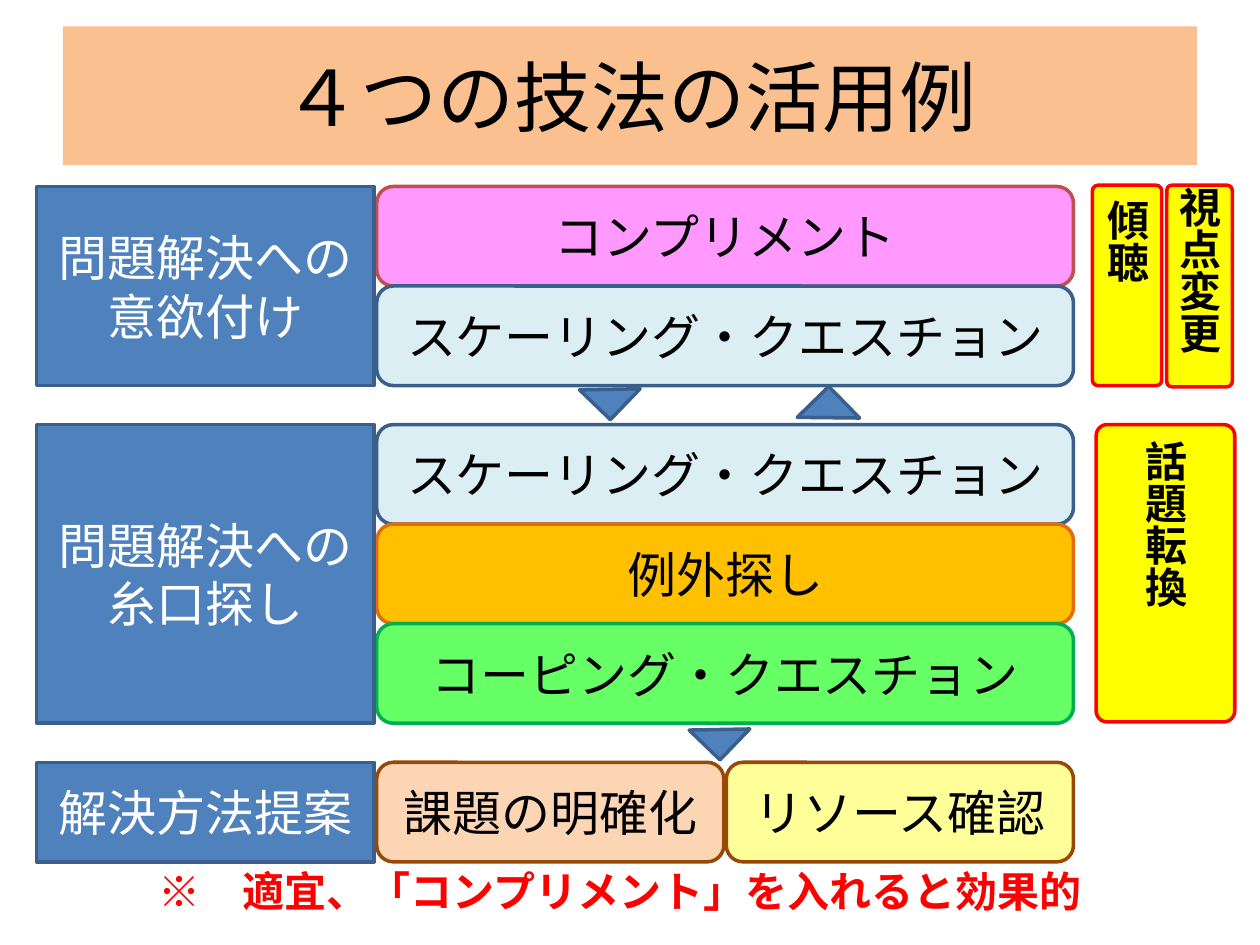
from dataclasses import dataclass

import pptx
import pptx.dml.color
import pptx.enum.shapes
import pptx.enum.text
import pptx.oxml
import pptx.oxml.ns
import pptx.util

Inches = pptx.util.Inches
Shape = pptx.enum.shapes.MSO_SHAPE


@dataclass(frozen=True)
class Theme:
    font: str = "Noto Sans CJK JP"
    title_size: int = 44
    body_size: int = 28
    note_size: int = 24
    line_width: int = 2
    black: str = "000000"
    white: str = "FFFFFF"
    red: str = "FF0000"
    yellow: str = "FFFF00"
    blue: str = "4F81BD"
    navy: str = "3A5F8C"
    title_fill: str = "FAC090"


@dataclass(frozen=True)
class Box:
    left: float
    top: float
    width: float
    height: float


@dataclass(frozen=True)
class Technique:
    text: str
    fill: str
    line: str


@dataclass(frozen=True)
class Stage:
    label: str
    top: float
    rows: tuple[tuple[Technique, ...], ...]


@dataclass(frozen=True)
class SkillTag:
    text: str
    box: Box
    margin: tuple[float, float] = (0.1, 0.05)


@dataclass(frozen=True)
class Arrow:
    box: Box
    rotation: float


THEME = Theme()
ROW_HEIGHT = 0.79
LABEL_LEFT, LABEL_WIDTH = 0.29, 2.68
BAR_LEFT, BAR_WIDTH, BAR_GAP = 2.99, 5.53, 0.02

SCALING = Technique("スケーリング・クエスチョン", "DBEEF4", THEME.navy)
STAGES = (
    Stage("問題解決への意欲付け", 1.48, (
        (Technique("コンプリメント", "FF99FF", "C0504D"),),
        (SCALING,),
    )),
    Stage("問題解決への\n糸口探し", 3.37, (
        (SCALING,),
        (Technique("例外探し", "FFC000", "E46C0A"),),
        (Technique("コーピング・クエスチョン", "66FF66", "00B050"),),
    )),
    Stage("解決方法提案", 6.05, (
        (Technique("課題の明確化", "FCD5B5", "984807"),
         Technique("リソース確認", "FFFF99", "984807")),
    )),
)
SKILL_TAGS = (
    SkillTag("傾聴", Box(8.67, 1.47, 0.55, 1.59)),
    SkillTag("話題転換", Box(8.7, 3.37, 1.1, 2.36)),
    SkillTag("視点変更", Box(9.26, 1.47, 0.52, 1.6), (0, 0)),
)
ARROWS = (
    Arrow(Box(4.67, 2.92, 0.34, 0.34), 314),
    Arrow(Box(6.4, 3.14, 0.35, 0.35), 135.6),
    Arrow(Box(5.54, 5.62, 0.34, 0.34), 314),
)


def rgb(color: str) -> pptx.dml.color.RGBColor:
    return pptx.dml.color.RGBColor.from_string(color)


def lengths(box: Box) -> tuple[int, ...]:
    return tuple(map(Inches, (box.left, box.top, box.width, box.height)))


def write_text(shape, text: str, size: int, color: str, bold: bool = False,
               margin: tuple[float, float] = (0.1, 0.05)) -> None:
    """Centre the text, one paragraph a line; margin is (sides, top and bottom)."""
    frame = shape.text_frame
    frame.word_wrap = True
    frame.vertical_anchor = pptx.enum.text.MSO_ANCHOR.MIDDLE
    frame.margin_left = frame.margin_right = Inches(margin[0])
    frame.margin_top = frame.margin_bottom = Inches(margin[1])
    frame.text = text
    for paragraph in frame.paragraphs:
        paragraph.alignment = pptx.enum.text.PP_ALIGN.CENTER
        font = paragraph.font
        font.name = THEME.font
        font.size = pptx.util.Pt(size)
        font.bold = bold
        font.color.rgb = rgb(color)
        properties = paragraph._p.pPr.find(pptx.oxml.ns.qn("a:defRPr"))
        properties.append(pptx.oxml.parse_xml(
            f'<a:ea {pptx.oxml.ns.nsdecls("a")} typeface="{THEME.font}"/>'))


def add_block(slide, kind: Shape, box: Box, fill: str, line: str | None = None):
    shape = slide.shapes.add_shape(kind, *lengths(box))
    shape.shadow.inherit = False
    shape.fill.solid()
    shape.fill.fore_color.rgb = rgb(fill)
    if line is None:
        shape.line.fill.background()
    else:
        shape.line.color.rgb = rgb(line)
        shape.line.width = pptx.util.Pt(THEME.line_width)
    return shape


def draw_stage(slide, stage: Stage) -> None:
    """Draw the stage's label and, beside it, its rows of techniques."""
    for index, row in enumerate(stage.rows):
        width = (BAR_WIDTH - BAR_GAP * (len(row) - 1)) / len(row)
        margin = (0.1 if len(row) == 1 else 0, 0.05)
        for column, technique in enumerate(row):
            box = Box(BAR_LEFT + column * (width + BAR_GAP),
                      stage.top + index * ROW_HEIGHT, width, ROW_HEIGHT)
            bar = add_block(slide, Shape.ROUNDED_RECTANGLE, box,
                            technique.fill, technique.line)
            write_text(bar, technique.text, THEME.body_size, THEME.black, margin=margin)
    box = Box(LABEL_LEFT, stage.top, LABEL_WIDTH, ROW_HEIGHT * len(stage.rows))
    label = add_block(slide, Shape.RECTANGLE, box, THEME.blue, THEME.navy)
    write_text(label, stage.label, THEME.body_size, THEME.white)


def draw_skill_tag(slide, tag: SkillTag) -> None:
    shape = add_block(slide, Shape.ROUNDED_RECTANGLE, tag.box, THEME.yellow, THEME.red)
    shape.adjustments[0] = 0.08
    write_text(shape, tag.text, THEME.note_size, THEME.black, True, tag.margin)
    shape.text_frame._txBody.bodyPr.set("vert", "eaVert")


def draw_arrow(slide, arrow: Arrow) -> None:
    shape = add_block(slide, Shape.RIGHT_TRIANGLE, arrow.box, THEME.blue, THEME.navy)
    shape.rotation = arrow.rotation


def main() -> None:
    presentation = pptx.Presentation()
    presentation.slide_width, presentation.slide_height = Inches(10), Inches(7.5)
    slide = presentation.slides.add_slide(presentation.slide_layouts[6])

    title = add_block(slide, Shape.RECTANGLE, Box(0.5, 0.21, 9, 1.1), THEME.title_fill)
    write_text(title, "４つの技法の活用例", THEME.title_size, THEME.black)
    for stage in STAGES:
        draw_stage(slide, stage)
    for tag in SKILL_TAGS:
        draw_skill_tag(slide, tag)
    for arrow in ARROWS:
        draw_arrow(slide, arrow)
    note = slide.shapes.add_textbox(*lengths(Box(0.74, 6.82, 8.36, 0.49)))
    write_text(note, "※　適宜、「コンプリメント」を入れると効果的",
               THEME.note_size, THEME.red, bold=True)

    presentation.save("out.pptx")


if __name__ == "__main__":
    main()
